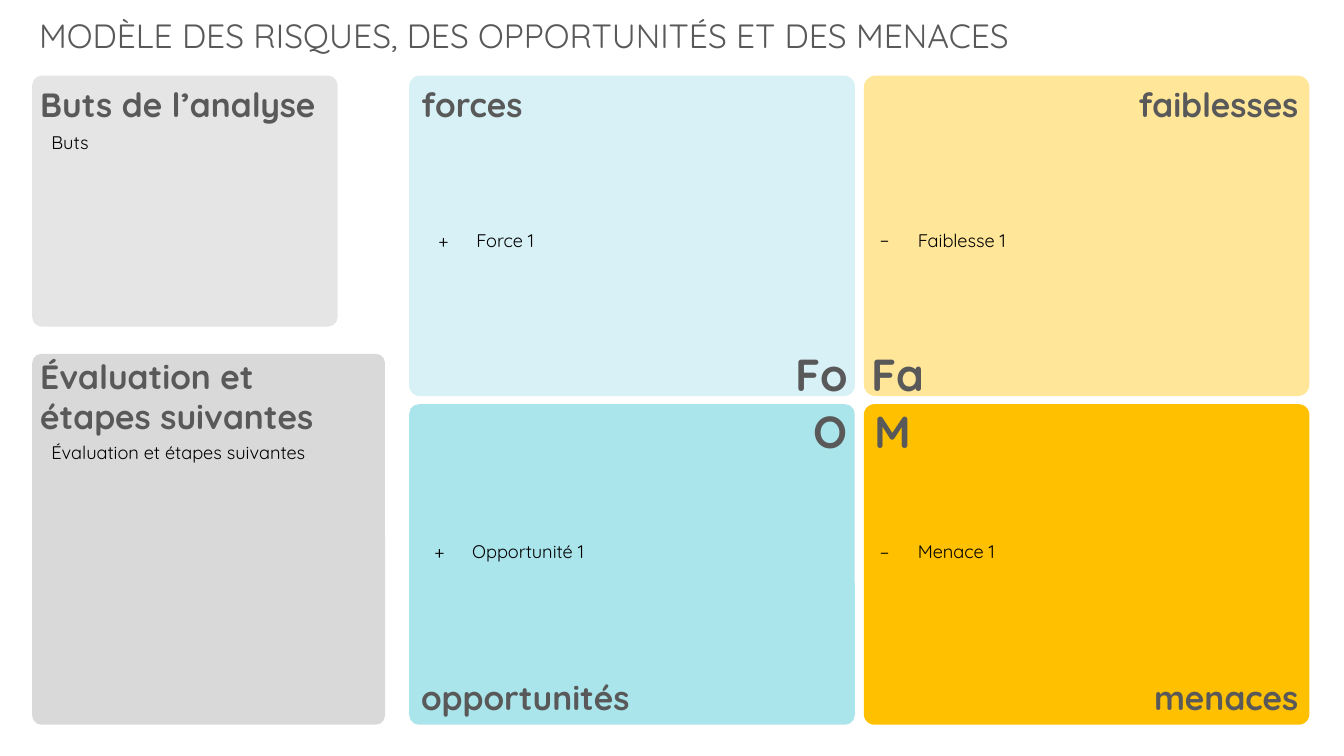
from lxml import etree
from pptx import Presentation
from pptx.dml.color import RGBColor
from pptx.enum.shapes import MSO_SHAPE
from pptx.enum.text import MSO_ANCHOR, PP_ALIGN
from pptx.oxml.ns import qn
from pptx.util import Pt

ROUNDED = MSO_SHAPE.ROUNDED_RECTANGLE
TOP, MIDDLE = MSO_ANCHOR.TOP, MSO_ANCHOR.MIDDLE
LEFT, RIGHT = PP_ALIGN.LEFT, PP_ALIGN.RIGHT

COLORS = {
    "text": "000000",
    "heading": "595959",
    "goals": "E5E5E5",
    "evaluation": "D9D9D9",
    "strengths": "D7F1F6",
    "weaknesses": "FFE699",
    "opportunities": "ABE5EC",
    "threats": "FFC000",
}
FORMATS = {
    "title": {"size": Pt(24), "bold": False},
    "heading": {"size": Pt(24), "bold": True},
    "initial": {"size": Pt(32), "bold": True},
    "body": {"size": Pt(13), "bold": False},
}
BULLET_INDENT = Pt(27)
QUADRANT_SIZE = (318.24, 228.96)

# color, corner, position, heading, initial, bullet item: each text with its box
QUADRANTS = [
    ("strengths", 0.033, (292.32, 54), LEFT,
     ("forces", (293.76, 56.16, 304.56, 65.52)),
     ("Fo", (344.16, 244.08, 268.56, 67.68)),
     ("+", "Force\u00a01", (302.4, 87.12, 266.4, 167.04))),
    ("weaknesses", 0.037, (617.04, 54), RIGHT,
     ("faiblesses", (630, 56.16, 304.56, 36)),
     ("Fa", (615.6, 244.08, 275.04, 67.68)),
     ("−", "Faiblesse\u00a01", (617.76, 87.12, 294.48, 166.32))),
    ("opportunities", 0.03, (292.32, 288.72), LEFT,
     ("opportunités", (293.76, 480.24, 304.56, 36)),
     ("O", (337.68, 285.12, 275.04, 46.08)),
     ("+", "Opportunité\u00a01", (299.52, 293.04, 278.64, 199.44))),
    ("threats", 0.033, (617.04, 288.72), RIGHT,
     ("menaces", (630, 480.24, 304.56, 36)),
     ("M", (617.76, 285.12, 266.4, 48.24)),
     ("−", "Menace\u00a01", (617.76, 293.04, 308.16, 199.44))),
]
# color, corner, panel box, heading, body: each text with its box
SIDE_PANELS = [
    ("goals", 0.038, (23.04, 54, 218.16, 179.28),
     ("Buts de l’analyse", (21.6, 56.16, 228.24, 65.52)),
     ("Buts", (25.92, 87.84, 200.16, 114.48))),
    ("evaluation", 0.026, (23.04, 252.72, 252, 264.96),
     ("Évaluation et étapes suivantes", (21.6, 250.56, 228.24, 65.52)),
     ("Évaluation et étapes suivantes", (25.92, 309.6, 248.4, 173.52))),
]


class SlideBuilder:
    font_name = "Quicksand"

    def __init__(self, slide):
        self.slide = slide

    def panel(self, box, color, corner):
        shape = self.slide.shapes.add_shape(ROUNDED, *map(Pt, box))
        shape.adjustments[0] = corner
        shape.shadow.inherit = False
        shape.fill.solid()
        shape.fill.fore_color.rgb = RGBColor.from_string(COLORS[color])
        shape.line.fill.background()

    def text(self, text, box, style, alignment=LEFT, color="heading"):
        shape = self.slide.shapes.add_textbox(*map(Pt, box))
        frame = shape.text_frame
        frame.word_wrap = True
        paragraph = frame.paragraphs[0]
        paragraph.alignment = alignment
        run = paragraph.add_run()
        run.text = text
        values = {"name": self.font_name, **FORMATS[style]}
        for attribute, value in values.items():
            setattr(run.font, attribute, value)
        run.font.color.rgb = RGBColor.from_string(COLORS[color])
        return frame

    def body(self, text, box, anchor=TOP):
        frame = self.text(text, box, "body", color="text")
        frame.margin_left = Pt(10.8)
        frame.vertical_anchor = anchor
        frame.paragraphs[0].line_spacing = 1.15
        return frame

    def bullet_item(self, bullet, text, box):
        frame = self.body(text, box, MIDDLE)
        properties = frame.paragraphs[0]._p.get_or_add_pPr()
        properties.set("marL", str(BULLET_INDENT))
        properties.set("indent", str(-BULLET_INDENT))
        etree.SubElement(properties, qn("a:buFont")).set("typeface", self.font_name)
        etree.SubElement(properties, qn("a:buChar")).set("char", bullet)


def main():
    presentation = Presentation()
    presentation.slide_width = Pt(960)
    presentation.slide_height = Pt(540)
    builder = SlideBuilder(presentation.slides.add_slide(presentation.slide_layouts[6]))

    builder.text("MODÈLE DES RISQUES, DES OPPORTUNITÉS ET DES MENACES",
                 (20.88, 7.2, 842.4, 36), "title")
    for color, corner, box, heading, body in SIDE_PANELS:
        builder.panel(box, color, corner)
        builder.body(*body)
        builder.text(*heading, "heading")
    for color, corner, position, side, heading, initial, item in QUADRANTS:
        builder.panel(position + QUADRANT_SIZE, color, corner)
        builder.bullet_item(*item)
        builder.text(*heading, "heading", side)
        # The initial sits on the inner side, opposite the heading
        builder.text(*initial, "initial", LEFT if side == RIGHT else RIGHT)

    presentation.save("out.pptx")


if __name__ == "__main__":
    main()
